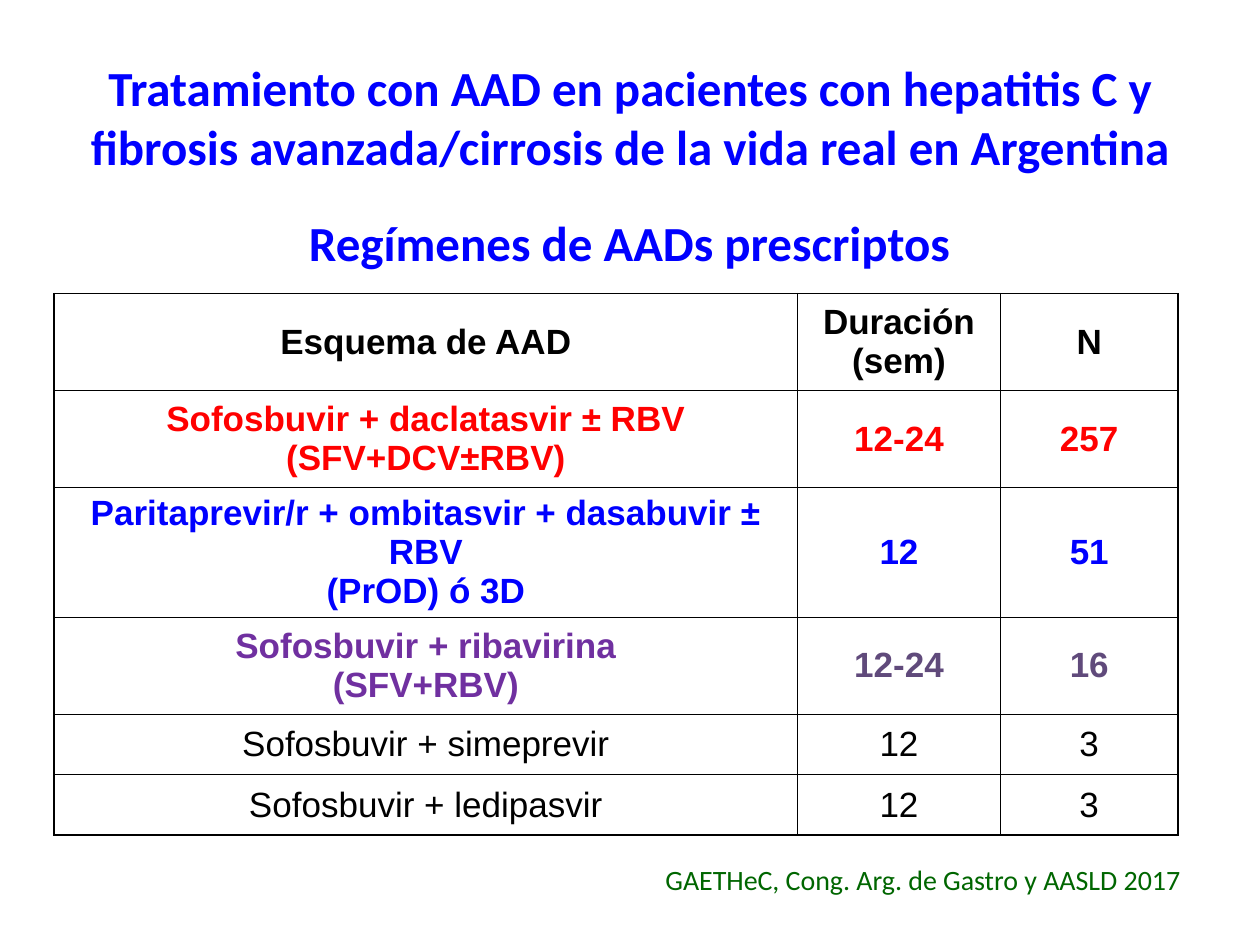
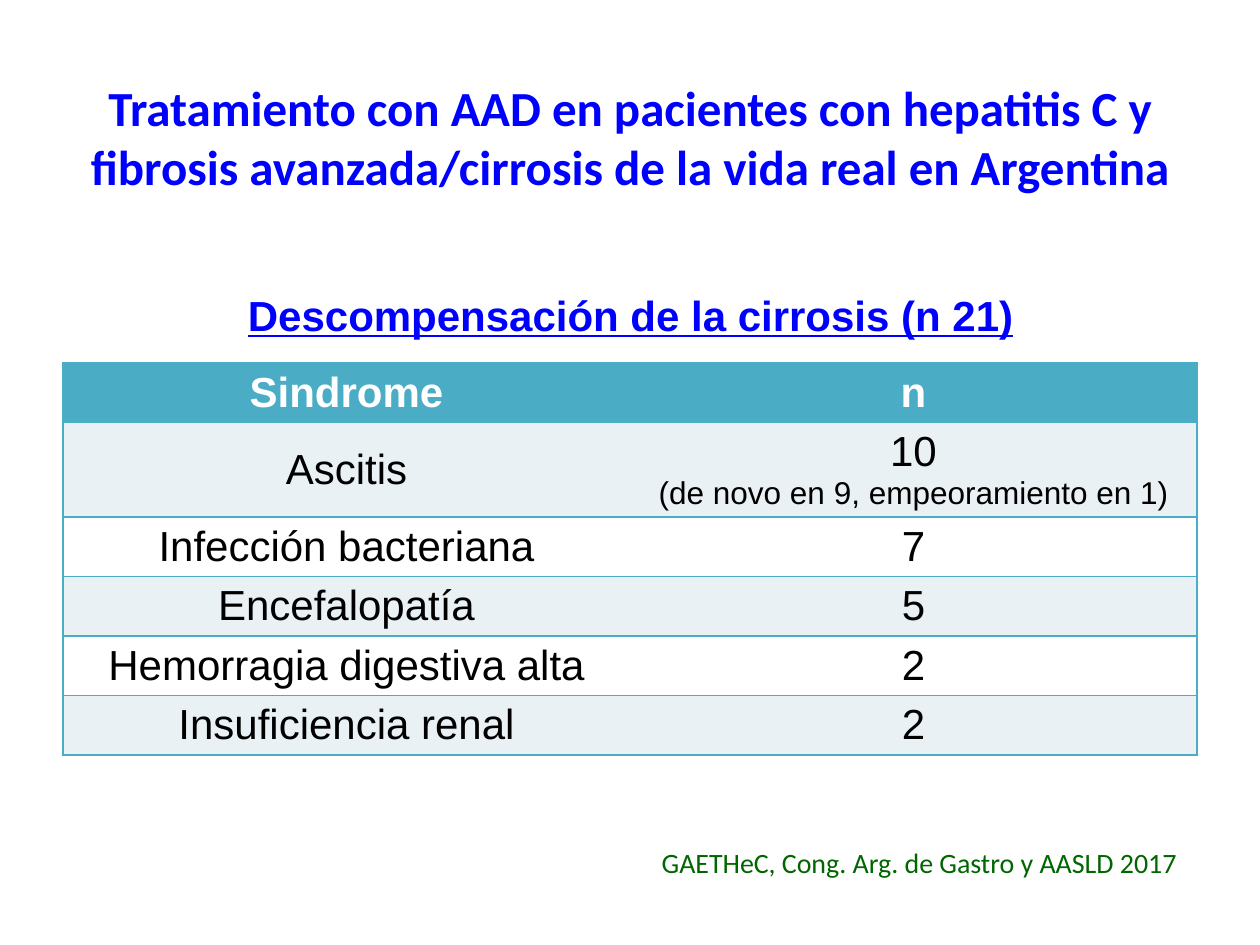
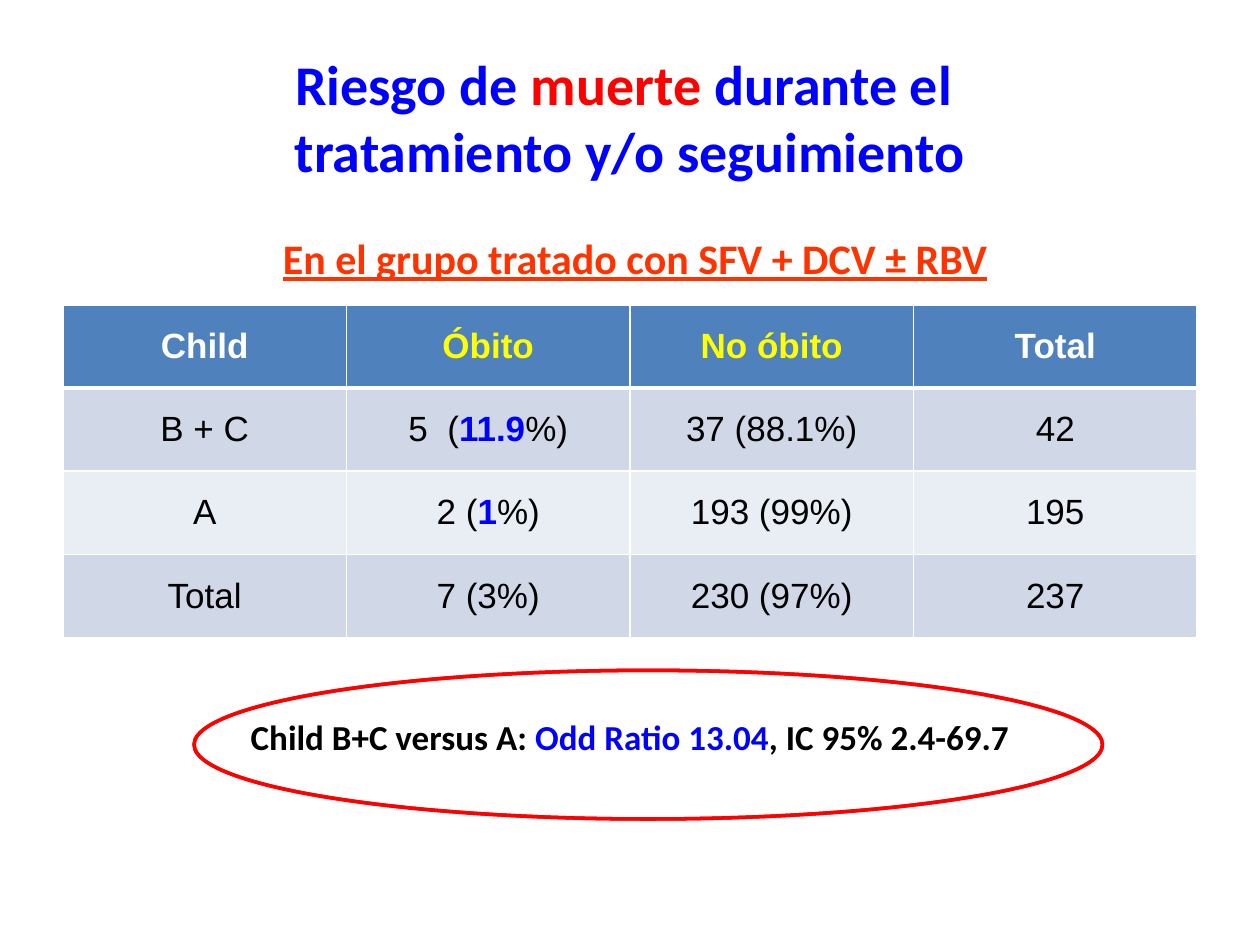
import pptx
import pptx.dml.color
import pptx.enum.shapes
import pptx.enum.text
import pptx.oxml.ns
import pptx.util
from lxml import etree

Inches = pptx.util.Inches
ALIGN = pptx.enum.text.PP_ALIGN
MIDDLE = pptx.enum.text.MSO_ANCHOR.MIDDLE

COLORS = {
    "blue": "0000FF", "red": "FF0000", "green": "006600", "orange": "FF3300",
    "violet": "7030A0", "plum": "604A7B", "yellow": "FFFF00",
    "black": "000000", "white": "FFFFFF",
    "teal": "4BACC6", "teal_band": "E9F1F5",
    "steel": "4F81BD", "steel_band": "D0D8E8", "steel_light": "E9EDF4",
}
STUDY_TITLE = ("Tratamiento con AAD en pacientes con hepatitis C y "
               "fibrosis avanzada/cirrosis de la vida real en Argentina")
SOURCE = "GAETHeC, Cong. Arg. de Gastro y AASLD 2017"


def rgb(color):
    return pptx.dml.color.RGBColor.from_string(COLORS[color])


class Deck:
    """Hold the shared style and the current slide, and add elements to it."""

    heading = {"name": "Calibri", "size": 28, "bold": True, "color": "blue"}
    footer_format = {"name": "Calibri", "size": 16, "color": "green"}

    def __init__(self):
        self.presentation = pptx.Presentation()
        self.presentation.slide_width = Inches(10)
        self.presentation.slide_height = Inches(7.5)
        self.slide = None

    def fill_text(self, frame, paragraphs, text_format, alignment=ALIGN.CENTER):
        frame.word_wrap = True
        for index, runs in enumerate(paragraphs):
            paragraph = frame.paragraphs[0] if index == 0 else frame.add_paragraph()
            paragraph.alignment = alignment
            for part in [runs] if isinstance(runs, str) else runs:
                text, changes = (part, {}) if isinstance(part, str) else part
                for number, line in enumerate(text.split("\n")):
                    if number:
                        paragraph.add_line_break()
                    run = paragraph.add_run()
                    run.text = line
                    self.format_font(run.font, {**text_format, **changes})

    def format_font(self, font, values):
        for key, value in values.items():
            if key == "color":
                font.color.rgb = rgb(value)
            else:
                setattr(font, key, pptx.util.Pt(value) if key == "size" else value)

    def new_slide(self, title, height=1.25, **changes):
        layout = self.presentation.slide_layouts[5]
        self.slide = self.presentation.slides.add_slide(layout)
        shape = self.slide.shapes.title
        shape.left, shape.top = Inches(0.5), Inches(0.3)
        shape.width, shape.height = Inches(9), Inches(height)
        shape.text_frame.auto_size = pptx.enum.text.MSO_AUTO_SIZE.NONE
        shape.text_frame.vertical_anchor = MIDDLE
        self.fill_text(shape.text_frame, [title], {**self.heading, **changes})

    def text(self, content, left, top, width, height, text_format, alignment=ALIGN.CENTER):
        box = self.slide.shapes.add_textbox(*map(Inches, (left, top, width, height)))
        self.fill_text(box.text_frame, [content], text_format, alignment)

    def subtitle(self, content, left, top, width, height=0.5, **changes):
        self.text(content, left, top, width, height, {**self.heading, **changes})

    def footer(self, top, right):
        self.text(SOURCE, right - 5.2, top, 5.2, 0.37, self.footer_format, ALIGN.RIGHT)

    def border(self, cell, edges):
        properties = cell._tc.get_or_add_tcPr()
        for index, (side, (color, width)) in enumerate(edges.items()):
            line = etree.Element(pptx.oxml.ns.qn(f"a:ln{side}"), w=str(pptx.util.Pt(width)))
            if width:
                fill = etree.SubElement(line, pptx.oxml.ns.qn("a:solidFill"))
                etree.SubElement(fill, pptx.oxml.ns.qn("a:srgbClr"), val=COLORS[color])
            else:
                etree.SubElement(line, pptx.oxml.ns.qn("a:noFill"))
            properties.insert(index, line)

    def table(self, rows, left, top, widths, heights, fills, size, line,
              header="black", header_rule=1, inner_rule=1):
        """Add a table whose rows pair a format with the cells it applies to."""
        last = len(widths) - 1
        frame = self.slide.shapes.add_table(
            len(rows), len(widths),
            *map(Inches, (left, top, sum(widths), sum(heights))))
        table = frame.table
        for column, width in zip(table.columns, widths):
            column.width = Inches(width)
        for row_index, (row_format, contents) in enumerate(rows):
            table.rows[row_index].height = Inches(heights[row_index])
            base = {"name": "Arial", "size": size, "bold": row_index == 0,
                    "color": "black" if row_index else header, **row_format}
            for column_index, content in enumerate(contents):
                cell = table.cell(row_index, column_index)
                cell.vertical_anchor = MIDDLE
                cell.fill.solid()
                cell.fill.fore_color.rgb = rgb(fills[row_index])
                paragraphs = [content] if isinstance(content, str) else content
                self.fill_text(cell.text_frame, paragraphs, base)
                self.border(cell, {
                    "L": (line, inner_rule if column_index else 1),
                    "R": (line, inner_rule if column_index < last else 1),
                    "T": (line, header_rule if row_index == 1 else 1),
                    "B": (line, header_rule if row_index == 0 else 1),
                })

    def ring(self, left, top, width, height, color):
        shape = self.slide.shapes.add_shape(
            pptx.enum.shapes.MSO_SHAPE.DONUT, *map(Inches, (left, top, width, height)))
        shape.adjustments[0] = 0
        shape.shadow.inherit = False
        shape.fill.solid()
        shape.fill.fore_color.rgb = rgb(color)
        shape.line.color.rgb = rgb(color)
        shape.line.width = pptx.util.Pt(2)


def regimens(deck):
    deck.new_slide(STUDY_TITLE)
    red, blue, violet = ({"color": color, "bold": True} for color in ("red", "blue", "violet"))
    plum = {"color": "plum"}
    rows = [
        ({}, ["Esquema de AAD", "Duración (sem)", "N"]),
        (red, [["Sofosbuvir + daclatasvir ± RBV", "(SFV+DCV±RBV)"], "12-24", "257"]),
        (blue, [["Paritaprevir/r + ombitasvir + dasabuvir ± RBV", "(PrOD) ó 3D"], "12", "51"]),
        (violet, [["Sofosbuvir + ribavirina", "(SFV+RBV)"],
                  [[("12-24", plum)]], [[("16", plum)]]]),
        ({}, ["Sofosbuvir + simeprevir", "12", "3"]),
        ({}, ["Sofosbuvir + ledipasvir", "12", "3"]),
    ]
    deck.table(rows, 0.43, 2.33, [5.9, 1.61, 1.41], [0.77] * 4 + [0.48] * 2,
               ["white"] * 6, 20, "black")
    deck.subtitle("Regímenes de AADs prescriptos", 0.54, 1.64, 8.91, 0.57)
    deck.footer(6.8, 9.47)


def decompensation(deck):
    deck.new_slide(STUDY_TITLE, 1.56)
    note = [("(de novo en 9, empeoramiento en 1)", {"size": 18})]
    cells = [
        ["Sindrome", "n"],
        ["Ascitis", ["10", note]],
        ["Infección bacteriana", "7"],
        ["Encefalopatía", "5"],
        ["Hemorragia digestiva alta", "2"],
        ["Insuficiencia renal", "2"],
    ]
    deck.table([({}, row) for row in cells], 0.5, 2.88, [4.5] * 2, [0.45] * 6,
               ["teal"] + ["teal_band", "white"] * 2 + ["teal_band"], 24, "teal",
               header="white", inner_rule=0)
    deck.subtitle("Descompensación de la cirrosis (n 21)", 0.83, 2.25, 8.35,
                  name="Arial", size=24, underline=True)
    deck.footer(6.66, 9.44)


def death_risk(deck):
    deck.new_slide(["Riesgo de ", ("muerte", {"color": "red"}),
                    " durante el \ntratamiento y/o seguimiento"], size=32)
    yellow = {"color": "yellow"}
    strong = {"color": "blue", "bold": True}
    cells = [
        ["Child", [[("Óbito", yellow)]], [[("No óbito", yellow)]], "Total"],
        ["B + C", [["5  (", ("11.9", strong), "%)"]], "37 (88.1%)", "42"],
        ["A", [["2 (", ("1", strong), "%)"]], "193 (99%)", "195"],
        ["Total", "7 (3%)", "230 (97%)", "237"],
    ]
    deck.table([({}, row) for row in cells], 0.5, 2.42, [2.25] * 4, [0.66] * 4,
               ["steel", "steel_band", "steel_light", "steel_band"], 20, "white",
               header="white", header_rule=3)
    deck.subtitle("En el grupo tratado con SFV + DCV ± RBV", 0.78, 1.8, 8.52,
                  size=24, color="orange", underline=True)
    deck.subtitle(["Child B+C versus A: ", ("Odd Ratio 13.04", {"color": "blue"}),
                   ", IC 95% 2.4-69.7"], 1.25, 5.63, 7.5, 0.44, size=20, color="black")
    deck.ring(1.54, 5.32, 7.21, 1.18, "red")


def main():
    deck = Deck()
    for build in (regimens, decompensation, death_risk):
        build(deck)
    deck.presentation.save("out.pptx")


if __name__ == "__main__":
    main()
